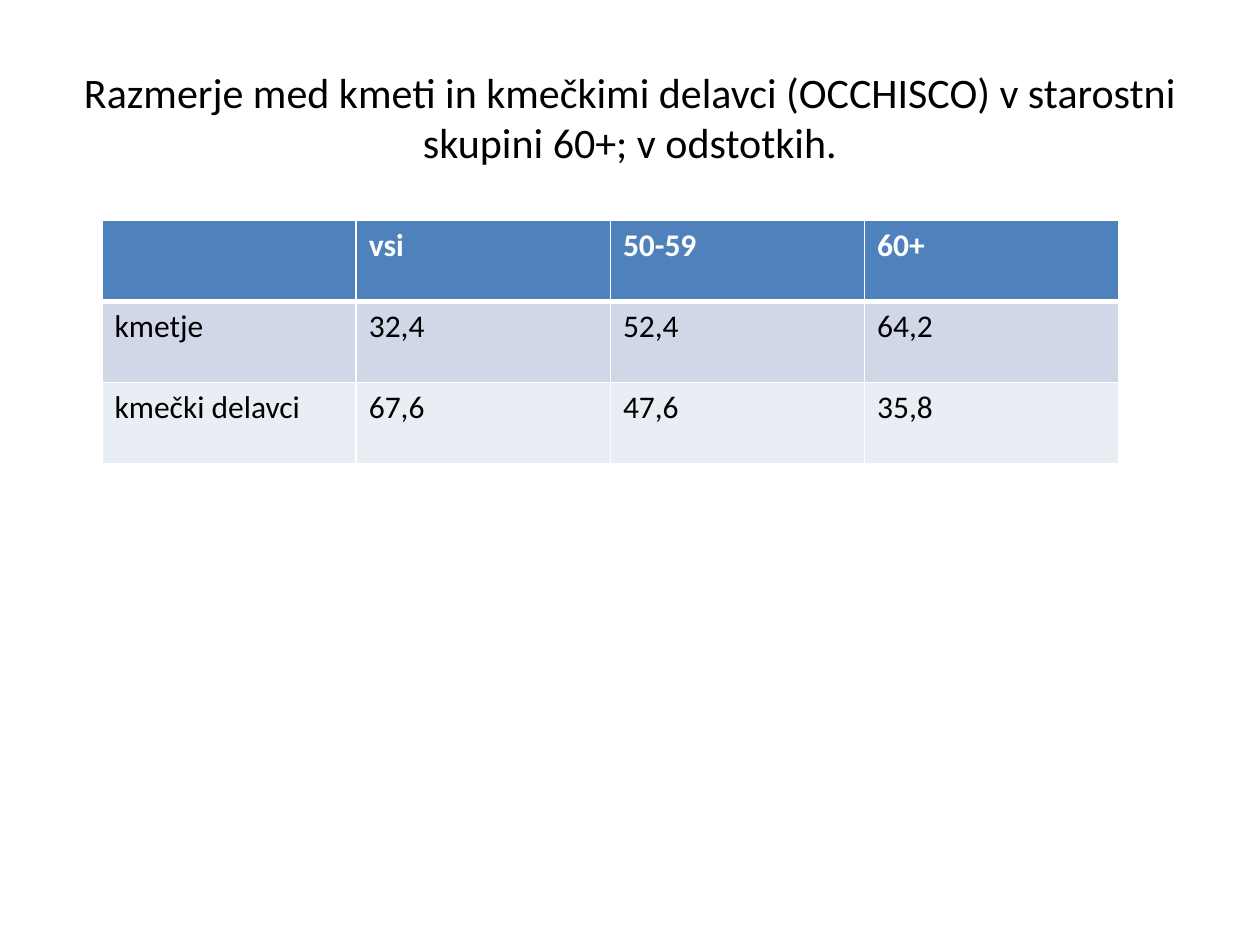
from lxml import etree
from pptx import Presentation
from pptx.dml.color import RGBColor
from pptx.enum.text import MSO_ANCHOR, PP_ALIGN
from pptx.oxml.ns import qn
from pptx.util import Inches, Pt

MIDDLE = MSO_ANCHOR.MIDDLE
TOP = MSO_ANCHOR.TOP
CENTER = PP_ALIGN.CENTER
LEFT = PP_ALIGN.LEFT

WIDTH, HEIGHT = 10, 7.5
TITLE = "Razmerje med kmeti in kmečkimi delavci (OCCHISCO) v starostni skupini 60+; v odstotkih."
ROWS = [
    ["", "vsi", "50-59", "60+"],
    ["kmetje", "32,4", "52,4", "64,2"],
    ["kmečki delavci", "67,6", "47,6", "35,8"],
]


def color(value):
    return RGBColor.from_string(value)


def write(frame, text, size=18, ink="000000", bold=False, align=LEFT,
          anchor=TOP, font="Calibri"):
    """Put one formatted paragraph into a text frame."""
    frame.word_wrap = True
    frame.vertical_anchor = anchor
    para = frame.paragraphs[0]
    para.alignment = align
    para.font.size = Pt(size)
    if text:
        span = para.add_run()
        span.text = text
        span.font.name = font
        span.font.size = Pt(size)
        span.font.bold = bold
        span.font.color.rgb = color(ink)


class Page:
    """Style and current slide; places are shares of the slide's size."""

    header_fill = "4F81BD"
    band_fills = ["D0D8E8", "E9EDF4"]
    rule = "FFFFFF"

    def __init__(self, deck):
        self.slide = deck.slides.add_slide(deck.slide_layouts[6])

    def place(self, left, top, width, height):
        return (Inches(left * WIDTH), Inches(top * HEIGHT),
                Inches(width * WIDTH), Inches(height * HEIGHT))

    def title(self, text, *area):
        box = self.slide.shapes.add_textbox(*self.place(*area))
        write(box.text_frame, text, size=24, align=CENTER, anchor=MIDDLE)

    def borders(self, cell, **weights):
        """Draw cell edges; they must precede the fill in the cell's XML."""
        properties = cell._tc.get_or_add_tcPr()
        for index, (side, points) in enumerate(weights.items()):
            line = etree.Element(qn(f"a:ln{side}"), w=str(Pt(points)))
            fill = etree.SubElement(line, qn("a:solidFill"))
            etree.SubElement(fill, qn("a:srgbClr"), val=self.rule)
            properties.insert(index, line)

    def table(self, rows, *area):
        frame = self.slide.shapes.add_table(len(rows), len(rows[0]), *self.place(*area))
        for r, row in enumerate(rows):
            header = r == 0
            fill = self.header_fill if header else self.band_fills[(r - 1) % 2]
            for c, text in enumerate(row):
                cell = frame.table.cell(r, c)
                cell.fill.solid()
                cell.fill.fore_color.rgb = color(fill)
                write(cell.text_frame, text, bold=header,
                      ink="FFFFFF" if header else "000000")
                self.borders(cell, L=1, R=1, T=3 if r == 1 else 1, B=3 if header else 1)


def main():
    deck = Presentation()
    deck.slide_width, deck.slide_height = Inches(WIDTH), Inches(HEIGHT)
    page = Page(deck)

    # Heading
    page.title(TITLE, 0.05, 0.04, 0.9, 1 / 6)

    # Shares by age group
    page.table(ROWS, 0.081, 1.75 / HEIGHT, 0.807, 1.93 / HEIGHT)

    deck.save("out.pptx")


if __name__ == "__main__":
    main()
